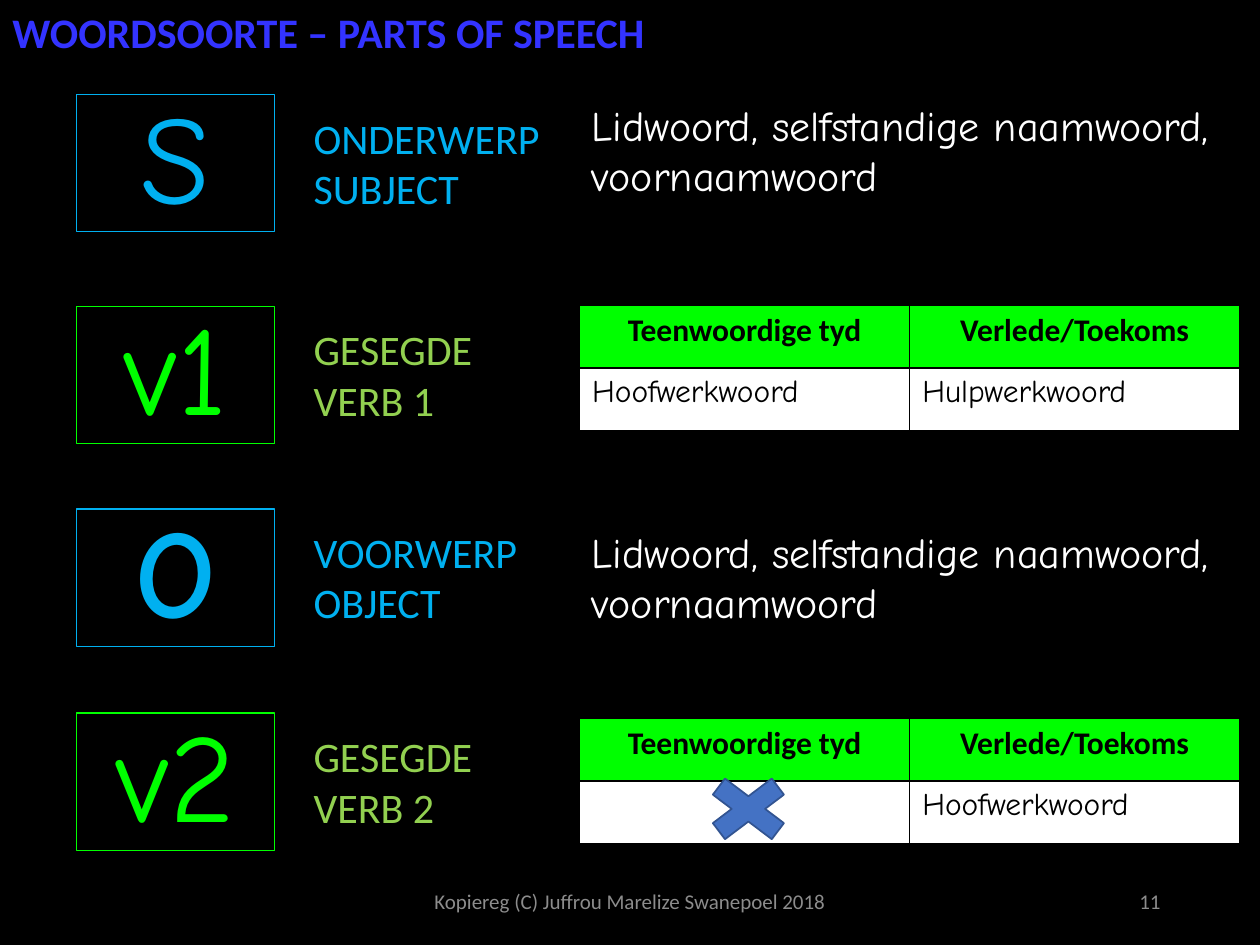
from dataclasses import dataclass

from lxml import etree
from pptx import Presentation
from pptx.dml.color import RGBColor
from pptx.enum.shapes import MSO_SHAPE
from pptx.enum.text import MSO_ANCHOR, MSO_AUTO_SIZE, PP_ALIGN
from pptx.oxml.ns import qn
from pptx.util import Inches, Pt

RECT, CROSS = MSO_SHAPE.RECTANGLE, MSO_SHAPE.MATH_MULTIPLY
LEFT, CENTER, RIGHT = PP_ALIGN.LEFT, PP_ALIGN.CENTER, PP_ALIGN.RIGHT
TOP, MIDDLE = MSO_ANCHOR.TOP, MSO_ANCHOR.MIDDLE
GROW, FIXED = MSO_AUTO_SIZE.SHAPE_TO_FIT_TEXT, MSO_AUTO_SIZE.NONE


@dataclass(frozen=True)
class Theme:
    plain: str = "Calibri"
    comic: str = "Comic Neue"
    black: str = "000000"
    white: str = "FFFFFF"
    blue: str = "00B0F0"
    green: str = "00FF00"
    olive: str = "92D050"
    title: str = "3333FF"
    gray: str = "8C8C8C"
    cross: str = "4472C4"
    edge: str = "325491"
    huge: int = 72
    body: int = 24
    cell: int = 18
    small: int = 12


class Page:
    def __init__(self, deck, theme):
        self.theme = theme
        self.slide = deck.slides.add_slide(deck.slide_layouts[6])
        self.paint(self.slide.background.fill, theme.black)

    def paint(self, fill, color):
        fill.solid()
        fill.fore_color.rgb = RGBColor.from_string(color)

    def put(self, frame, lines, size, color, font=None, bold=False, align=LEFT):
        """Put each line in a paragraph of its own."""
        for i, line in enumerate(lines):
            para = frame.add_paragraph() if i else frame.paragraphs[0]
            para.alignment = align
            run = para.add_run()
            run.text = line
            run.font.name = font or self.theme.plain
            run.font.size = Pt(size)
            run.font.bold = bold
            run.font.color.rgb = RGBColor.from_string(color)

    def shape(self, kind, box, fill, edge, width):
        shape = self.slide.shapes.add_shape(kind, *map(Inches, box))
        shape.shadow.inherit = False
        self.paint(shape.fill, fill)
        self.paint(shape.line.fill, edge)
        shape.line.width = Pt(width)
        return shape

    def card(self, box, mark, color, bold):
        frame = self.shape(RECT, box, self.theme.black, color, 0.75).text_frame
        frame.word_wrap = True
        frame.vertical_anchor = MIDDLE
        frame.margin_left = frame.margin_right = Inches(0.1)
        frame.margin_top = frame.margin_bottom = Inches(0.1)
        self.put(frame, [mark], self.theme.huge, color, self.theme.comic, bold, CENTER)
        frame.paragraphs[0].line_spacing = 0.9

    def text(self, box, lines, size, color, anchor=TOP, fit=GROW, **style):
        frame = self.slide.shapes.add_textbox(*map(Inches, box)).text_frame
        frame.word_wrap = True
        frame.auto_size = fit
        frame.vertical_anchor = anchor
        self.put(frame, lines, size, color, **style)

    def border(self, cell):
        props = cell._tc.get_or_add_tcPr()
        for i, side in enumerate(("lnL", "lnR", "lnT", "lnB")):
            line = etree.Element(qn(f"a:{side}"), w=str(Pt(1)))
            fill = etree.SubElement(line, qn("a:solidFill"))
            etree.SubElement(fill, qn("a:srgbClr"), val=self.theme.black)
            props.insert(i, line)

    def table(self, box, rows):
        t = self.theme
        grid = self.slide.shapes.add_table(len(rows), len(rows[0]), *map(Inches, box)).table
        looks = (
            (t.green, dict(bold=True, align=CENTER)),
            (t.white, dict(font=t.comic)),
        )
        for r, (row, (fill, style)) in enumerate(zip(rows, looks)):
            for c, word in enumerate(row):
                cell = grid.cell(r, c)
                self.paint(cell.fill, fill)
                self.border(cell)
                if word:
                    self.put(cell.text_frame, [word], t.cell, t.black, **style)


def main():
    deck = Presentation()
    deck.slide_width, deck.slide_height = Inches(10), Inches(7.5)
    t = Theme()
    page = Page(deck, t)

    page.text((0, 0, 5.42, 0.5), ["WOORDSOORTE – PARTS OF SPEECH"],
              t.body, t.title, MIDDLE, bold=True)

    nouns = "Lidwoord, selfstandige naamwoord, voornaamwoord"
    heads = ("Teenwoordige tyd", "Verlede/Toekoms")
    # Card top, mark, bold, card colour, label colour, label, detail top, detail
    parts = (
        (0.75, "S", False, t.blue, t.blue, ("ONDERWERP", "SUBJECT"), 0.74, nouns),
        (2.43, "v1", False, t.green, t.olive, ("GESEGDE", "VERB 1"),
         2.42, ("Hoofwerkwoord", "Hulpwerkwoord")),
        (4.04, "O", True, t.blue, t.blue, ("VOORWERP", "OBJECT"), 4.13, nouns),
        (5.66, "v2", False, t.green, t.olive, ("GESEGDE", "VERB 2"),
         5.7, ("", "Hoofwerkwoord")),
    )
    for top, mark, bold, color, tint, label, y, detail in parts:
        page.card((0.61, top, 1.57, 1.09), mark, color, bold)
        page.text((2.39, top + 0.09, 2, 0.91), label, t.body, tint)
        if detail == nouns:
            page.text((4.6, y, 5.24, 0.91), [nouns], t.body, t.white, font=t.comic)
        else:
            page.table((4.6, y, 5.24, 1), (heads, detail))

    page.shape(CROSS, (5.49, 6.08, 0.9, 0.68), t.cross, t.edge, 1)

    feet = (
        (3.31, 3.38, "Kopiereg (C) Juffrou Marelize Swanepoel 2018", CENTER),
        (7.06, 2.25, "11", RIGHT),
    )
    for left, width, words, align in feet:
        page.text((left, 6.95, width, 0.4), [words], t.small, t.gray,
                  MIDDLE, FIXED, align=align)

    deck.save("out.pptx")


if __name__ == "__main__":
    main()
